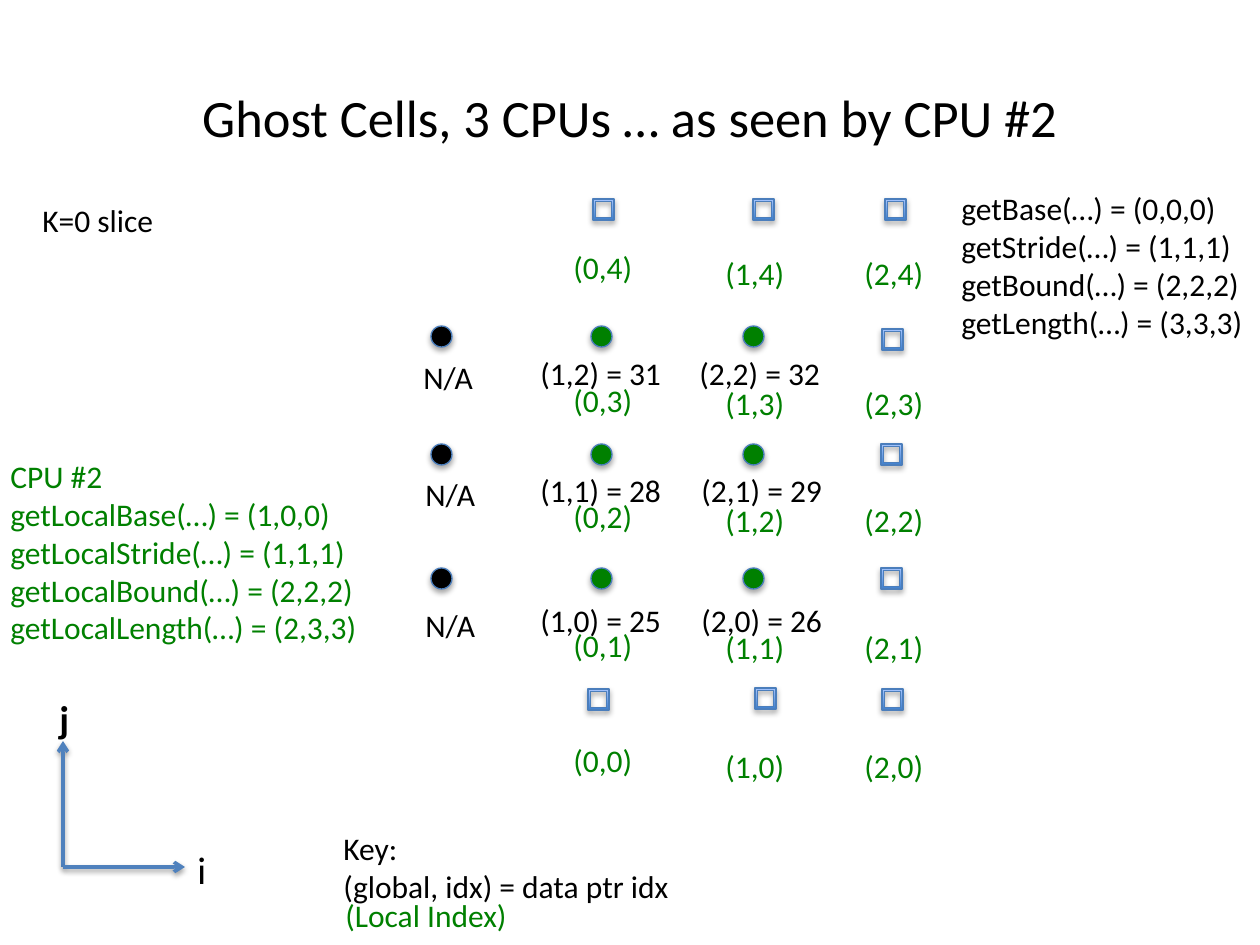
from lxml.etree import SubElement
from pptx import Presentation
from pptx.dml.color import RGBColor
from pptx.enum.shapes import MSO_CONNECTOR, MSO_SHAPE
from pptx.enum.text import MSO_ANCHOR, MSO_AUTO_SIZE, PP_ALIGN
from pptx.oxml.ns import qn
from pptx.util import Emu, Pt

PX_PER_INCH = 126
BLACK = RGBColor(0x00, 0x00, 0x00)
GREEN = RGBColor(0x00, 0x80, 0x00)
OUTLINE = RGBColor(0x4B, 0x7E, 0xBC)
AXIS_BLUE = RGBColor(0x4F, 0x81, 0xBD)
GHOST_DARK = RGBColor(0x3F, 0x80, 0xCE)
GHOST_LIGHT = RGBColor(0xA4, 0xC4, 0xFF)

MARKER = 21
LINE_HEIGHT = 50

# Offsets inside the grid box; rows and columns are indexed by local j and i.
ROW_Y = [499, 378, 254, 136, 9]
OWNED_X = [181, 333]
OFF_CPU_X = 21
GHOST_AT = [(178, 499), (345, 498), (472, 499),
            (471, 378), (471, 254), (472, 139),
            (183, 9), (343, 9), (475, 9)]
LOCAL_X = [151, 303, 442]
LOCAL_Y = [551, 432, 305, 188, 58]
LOCAL_Y_FIRST = [545, 430, 301, 185, 52]
GLOBAL_X = [118, 279]
GLOBAL_Y = [405, 275, 158]
NOT_AVAILABLE_AT = [(3, 410), (3, 279), (1, 162)]
FIRST_DATA_INDEX = 25


def px(length):
    return Emu(round(length * 914400 / PX_PER_INCH))


def box_emu(box):
    return [px(length) for length in box]


def add_text(slide, box, lines, color=BLACK, size=18, bold=False):
    label = slide.shapes.add_textbox(*box_emu(box))
    frame = label.text_frame
    frame.word_wrap = False
    frame.auto_size = MSO_AUTO_SIZE.SHAPE_TO_FIT_TEXT
    frame.text = "\n".join(lines)
    for paragraph in frame.paragraphs:
        paragraph.font.name = "Calibri"
        paragraph.font.size = Pt(size)
        paragraph.font.bold = bold
        paragraph.font.color.rgb = color
    return frame


def add_shadow(part, distance, opacity):
    properties = part._element.spPr
    effects = properties.find(qn("a:effectLst"))
    if effects is None:
        effects = SubElement(properties, qn("a:effectLst"))
    shadow = SubElement(effects, qn("a:outerShdw"), blurRad="40000",
                        dist=str(distance), dir="5400000", rotWithShape="0")
    black = SubElement(shadow, qn("a:srgbClr"), val="000000")
    SubElement(black, qn("a:alpha"), val=str(opacity * 1000))


def add_marker(slide, kind, left, top):
    marker = slide.shapes.add_shape(kind, *box_emu((left, top, MARKER, MARKER)))
    marker.line.color.rgb = OUTLINE
    marker.line.width = Pt(0.75)
    marker.shadow.inherit = False
    add_shadow(marker, 23000, 35)
    return marker


def add_cell(slide, left, top, color):
    cell = add_marker(slide, MSO_SHAPE.OVAL, left, top)
    cell.fill.solid()
    cell.fill.fore_color.rgb = color


def add_ghost(slide, left, top):
    ghost = add_marker(slide, MSO_SHAPE.FRAME, left, top)
    ghost.fill.gradient()
    ghost.fill.gradient_angle = 90
    stops = zip(ghost.fill.gradient_stops, (0, 1), (GHOST_DARK, GHOST_LIGHT))
    for stop, position, color in stops:
        stop.position = position
        stop.color.rgb = color


def add_title(slide, box):
    frame = add_text(slide, box, ["Ghost Cells, 3 CPUs … as seen by CPU #2"], size=30)
    frame.word_wrap = True
    frame.auto_size = MSO_AUTO_SIZE.NONE
    frame.vertical_anchor = MSO_ANCHOR.MIDDLE
    frame.paragraphs[0].alignment = PP_ALIGN.CENTER


def add_grid(slide, left, top):
    # Cells held by another CPU, and the cells this CPU owns
    for j, (x, y) in enumerate(NOT_AVAILABLE_AT):
        row_top = top + ROW_Y[j + 1]
        add_cell(slide, left + OFF_CPU_X, row_top, BLACK)
        add_text(slide, (left + x, top + y, 76, LINE_HEIGHT), ["N/A"])
        for i, column in enumerate(OWNED_X):
            add_cell(slide, left + column, row_top, GREEN)
            # The last column's top label sits slightly to the left
            nudge = -2 if (i, j) == (1, 2) else 0
            data_index = FIRST_DATA_INDEX + 3 * j + i
            add_text(slide, (left + GLOBAL_X[i] + nudge, top + GLOBAL_Y[j],
                             147, LINE_HEIGHT),
                     [f"({i + 1},{j}) = {data_index}"])

    # Ghost cells
    for x, y in GHOST_AT:
        add_ghost(slide, left + x, top + y)

    # Local indices
    for i, x in enumerate(LOCAL_X):
        for j, y in enumerate(LOCAL_Y if i else LOCAL_Y_FIRST):
            add_text(slide, (left + x, top + y, 84, LINE_HEIGHT),
                     [f"({i},{j})"], GREEN)


def add_axes(slide, left, top):
    origin = (left + 16, top + 178)
    for tip in ((left + 16, top + 52), (left + 138, top + 178)):
        axis = slide.shapes.add_connector(MSO_CONNECTOR.STRAIGHT,
                                          *box_emu(origin + tip))
        axis.line.color.rgb = AXIS_BLUE
        axis.line.width = Pt(2)
        SubElement(axis._element.spPr.find(qn("a:ln")), qn("a:tailEnd"), type="arrow")
        add_shadow(axis, 20000, 38)
    add_text(slide, (left + 138, top + 151, 34, 59), ["i"], size=22)
    add_text(slide, (left, top, 35, 59), ["j"], size=22, bold=True)


def add_key(slide, left, top):
    add_text(slide, (left, top, 354, 89), ["Key:", "(global, idx) = data ptr idx"])
    add_text(slide, (left + 2, top + 67, 188, LINE_HEIGHT), ["(Local Index)"], GREEN)


def add_calls(slide, box, prefix, values, color, heading=()):
    calls = [f"{prefix}{name}(…) = {value}" for name, value in
             zip(("Base", "Stride", "Bound", "Length"), values)]
    add_text(slide, box, [*heading, *calls], color)


def main():
    presentation = Presentation()
    presentation.slide_width, presentation.slide_height = px(1260), px(945)
    slide = presentation.slides.add_slide(presentation.slide_layouts[6])

    add_title(slide, (63, 38, 1134, 157))
    add_text(slide, (30, 195, 137, LINE_HEIGHT), ["K=0 slice"])
    add_grid(slide, 410, 190)
    add_axes(slide, 47, 689)
    add_calls(slide, (-2, 451, 375, 204), "getLocal",
              ("(1,0,0)", "(1,1,1)", "(2,2,2)", "(2,3,3)"), GREEN, ["CPU #2"])
    add_calls(slide, (949, 183, 309, 165), "get",
              ("(0,0,0)", "(1,1,1)", "(2,2,2)", "(3,3,3)"), BLACK)
    add_key(slide, 331, 823)

    presentation.save("out.pptx")


if __name__ == "__main__":
    main()
